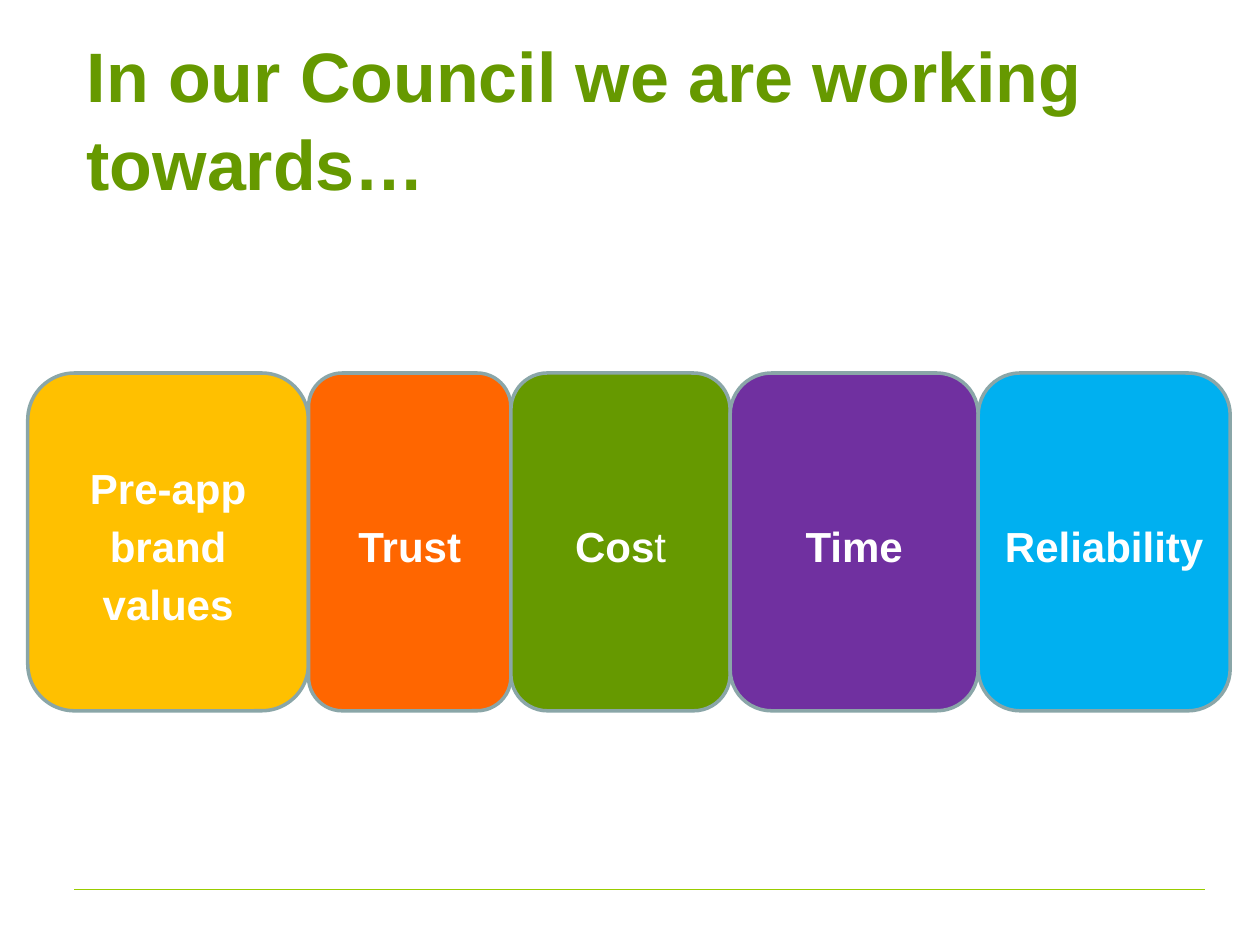
import pptx
import pptx.dml.color
import pptx.enum.shapes
import pptx.enum.text
import pptx.oxml
import pptx.oxml.ns
import pptx.util
from pptx.util import Cm

RGBColor = pptx.dml.color.RGBColor
GREEN = RGBColor(0x66, 0x99, 0x00)
LIME = RGBColor(0x99, 0xCC, 0x00)
AMBER = RGBColor(0xFF, 0xC0, 0x00)
ORANGE = RGBColor(0xFF, 0x66, 0x00)
PURPLE = RGBColor(0x70, 0x30, 0xA0)
BLUE = RGBColor(0x00, 0xB0, 0xF0)
GREY = RGBColor(0x8A, 0xA6, 0xA8)
WHITE = RGBColor(0xFF, 0xFF, 0xFF)

ALIGN = pptx.enum.text.PP_ALIGN

# Runs as (text, bold), fill, width in cm
VALUES = [
    ([("Pre-app brand values", True)], AMBER, 5.66),
    ([("Trust", True)], ORANGE, 4.08),
    ([("Cos", True), ("t", False)], GREEN, 4.42),
    ([("Time", True)], PURPLE, 5),
    ([("Reliability", True)], BLUE, 5.08),
]
ROW_LEFT, ROW_TOP, ROW_HEIGHT = 0.56, 7.52, 6.81


def write_text(shape, runs, size, color, align=ALIGN.LEFT, line_spacing=1.0, space_after=0):
    """Fill the shape with one vertically centred paragraph of (text, bold) runs."""
    frame = shape.text_frame
    frame.word_wrap = True
    frame.vertical_anchor = pptx.enum.text.MSO_ANCHOR.MIDDLE
    paragraph = frame.paragraphs[0]
    paragraph.alignment = align
    paragraph.line_spacing = line_spacing
    paragraph.space_after = pptx.util.Pt(space_after)
    for text, bold in runs:
        run = paragraph.add_run()
        run.text = text
        run.font.name = "Arial"
        run.font.size = pptx.util.Pt(size)
        run.font.bold = bold
        run.font.color.rgb = color


def add_title(slide, text):
    title = slide.shapes.add_textbox(Cm(1.5), Cm(0.76), Cm(22.86), Cm(3.18))
    write_text(title, [(text, True)], size=40, color=GREEN, line_spacing=1.05)


def add_value_card(slide, left, width, runs, fill):
    card = slide.shapes.add_shape(
        pptx.enum.shapes.MSO_SHAPE.ROUNDED_RECTANGLE,
        Cm(left), Cm(ROW_TOP), Cm(width), Cm(ROW_HEIGHT))
    card.shadow.inherit = False
    card.fill.solid()
    card.fill.fore_color.rgb = fill
    card.line.color.rgb = GREY
    card.line.width = pptx.util.Pt(2)
    write_text(card, runs, size=24, color=WHITE, align=ALIGN.CENTER,
               line_spacing=1.15, space_after=10)


def add_footer_rule(slide):
    rule = slide.shapes.add_connector(
        pptx.enum.shapes.MSO_CONNECTOR.STRAIGHT,
        Cm(1.5), Cm(17.93), Cm(24.3), Cm(17.93))
    rule.line.color.rgb = LIME
    rule.line.width = pptx.util.Pt(0.75)
    properties = rule._element.spPr
    properties.append(pptx.oxml.parse_xml(
        f"<a:effectLst {pptx.oxml.ns.nsdecls('a')}/>"))


def main():
    deck = pptx.Presentation()
    deck.slide_width, deck.slide_height = Cm(25.4), Cm(19.05)
    slide = deck.slides.add_slide(deck.slide_layouts[6])
    add_footer_rule(slide)
    add_title(slide, "In our Council we are working towards…")
    left = ROW_LEFT
    for runs, fill, width in VALUES:
        add_value_card(slide, left, width, runs, fill)
        left += width
    deck.save("out.pptx")


if __name__ == "__main__":
    main()
